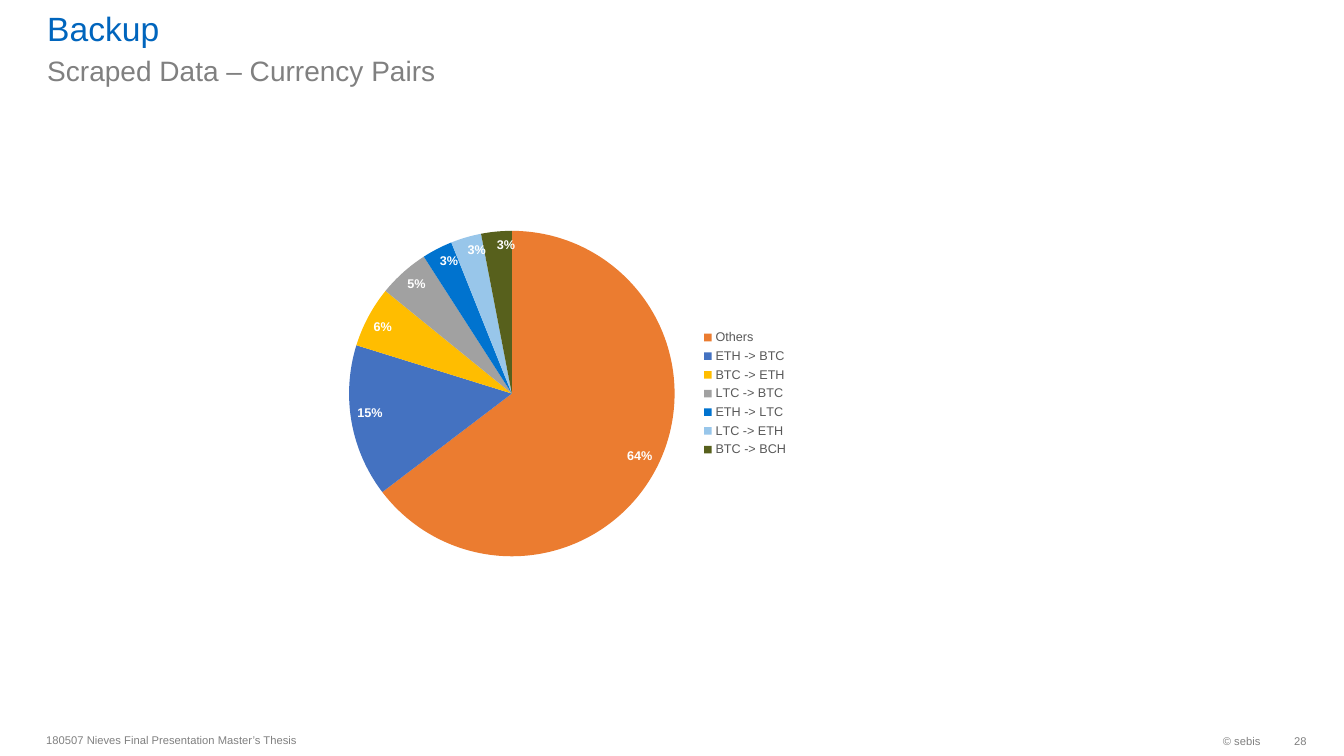
from dataclasses import dataclass

from lxml.etree import SubElement
from pptx import Presentation
from pptx.chart.data import CategoryChartData
from pptx.dml.color import RGBColor
from pptx.enum.chart import XL_CHART_TYPE, XL_LABEL_POSITION, XL_LEGEND_POSITION
from pptx.enum.text import MSO_ANCHOR, PP_ALIGN
from pptx.oxml.ns import qn
from pptx.slide import Slide
from pptx.text.text import Font
from pptx.util import Inches, Pt

FONT_NAME = "Arial"
COLORS = {
    "title": "0065BD",
    "muted": "808080",
    "legend": "595959",
    "label": "FFFFFF",
    "text": "000000",
    "background": "FFFFFF",
}


@dataclass
class Label:
    text: str
    left: float
    top: float
    width: float
    height: float
    size: int
    color: str = "muted"
    anchor: MSO_ANCHOR = MSO_ANCHOR.MIDDLE
    alignment: PP_ALIGN = PP_ALIGN.LEFT
    right_inset: float = 0.1
    vertical_inset: float = 0.05


@dataclass
class Slice:
    pair: str
    percent: int
    color: str


LABELS = [
    Label("Backup", 0.37, 0.09, 11.58, 0.39, 24, "title", MSO_ANCHOR.BOTTOM,
          vertical_inset=0),
    Label("Scraped Data – Currency Pairs", 0.37, 0.48, 11.58, 0.43, 20,
          anchor=MSO_ANCHOR.TOP),
    Label("180507 Nieves Final Presentation Master’s Thesis", 0.36, 7.18, 6.3, 0.32, 8),
    Label("© sebis", 10.26, 7.19, 2.34, 0.32, 8, alignment=PP_ALIGN.RIGHT),
    Label("28", 12.6, 7.19, 0.36, 0.32, 8, alignment=PP_ALIGN.RIGHT, right_inset=0),
]

SLICES = [
    Slice("Others", 64, "EB7C30"),
    Slice("ETH -> BTC", 15, "4472C1"),
    Slice("BTC -> ETH", 6, "FFBD00"),
    Slice("LTC -> BTC", 5, "A1A1A1"),
    Slice("ETH -> LTC", 3, "0073CF"),
    Slice("LTC -> ETH", 3, "98C6EA"),
    Slice("BTC -> BCH", 3, "57601C"),
]

# Plot area as fractions of the chart frame
PLOT_LAYOUT = {"x": 0.05, "y": 0.04, "w": 0.69, "h": 0.92}


def style_font(font: Font, size: int, color: str, bold: bool = False) -> None:
    font.name = FONT_NAME
    font.size = Pt(size)
    font.bold = bold
    font.color.rgb = RGBColor.from_string(COLORS[color])


def add_label(slide: Slide, label: Label) -> None:
    shape = slide.shapes.add_textbox(Inches(label.left), Inches(label.top),
                                     Inches(label.width), Inches(label.height))
    frame = shape.text_frame
    frame.word_wrap = True
    frame.vertical_anchor = label.anchor
    frame.margin_left = Inches(0.1)
    frame.margin_right = Inches(label.right_inset)
    frame.margin_top = frame.margin_bottom = Inches(label.vertical_inset)
    paragraph = frame.paragraphs[0]
    paragraph.alignment = label.alignment
    run = paragraph.add_run()
    run.text = label.text
    style_font(run.font, label.size, label.color)


def add_pie(slide: Slide, slices: list[Slice]) -> None:
    data = CategoryChartData(number_format='0"%"')
    data.categories = [item.pair for item in slices]
    data.add_series("Series 1", [item.percent for item in slices])
    chart = slide.shapes.add_chart(XL_CHART_TYPE.PIE, Inches(3.22), Inches(2.15),
                                   Inches(4.7), Inches(3.51), data).chart
    chart.has_title = False
    style_font(chart.font, 10, "text")

    # Legend
    chart.has_legend = True
    chart.legend.position = XL_LEGEND_POSITION.RIGHT
    chart.legend.include_in_layout = False
    style_font(chart.legend.font, 9, "legend")

    # Slices
    plot = chart.plots[0]
    plot.vary_by_categories = True
    series = plot.series[0]
    for index, item in enumerate(slices):
        point_format = series.points[index].format
        point_format.fill.solid()
        point_format.fill.fore_color.rgb = RGBColor.from_string(item.color)
        point_format.line.fill.background()

    # Data labels
    labels = series.data_labels
    labels.show_value = True
    labels.number_format = '0"%"'
    labels.number_format_is_linked = False
    labels.position = XL_LABEL_POSITION.INSIDE_END
    style_font(labels.font, 9, "label", bold=True)

    # Plot position
    plot_area = chart.element.find(".//" + qn("c:plotArea"))
    layout = plot_area.find(qn("c:layout"))
    if layout is None:
        layout = SubElement(plot_area, qn("c:layout"))
        plot_area.insert(0, layout)
    manual = SubElement(layout, qn("c:manualLayout"))
    SubElement(manual, qn("c:layoutTarget")).set("val", "inner")
    for axis in ("x", "y"):
        SubElement(manual, qn(f"c:{axis}Mode")).set("val", "edge")
    for key, fraction in PLOT_LAYOUT.items():
        SubElement(manual, qn(f"c:{key}")).set("val", str(fraction))


def main() -> None:
    presentation = Presentation()
    presentation.slide_width = Inches(13.33)
    presentation.slide_height = Inches(7.5)
    slide = presentation.slides.add_slide(presentation.slide_layouts[6])
    slide.background.fill.solid()
    slide.background.fill.fore_color.rgb = RGBColor.from_string(COLORS["background"])
    for label in LABELS:
        add_label(slide, label)
    add_pie(slide, SLICES)
    presentation.save("out.pptx")


if __name__ == "__main__":
    main()
